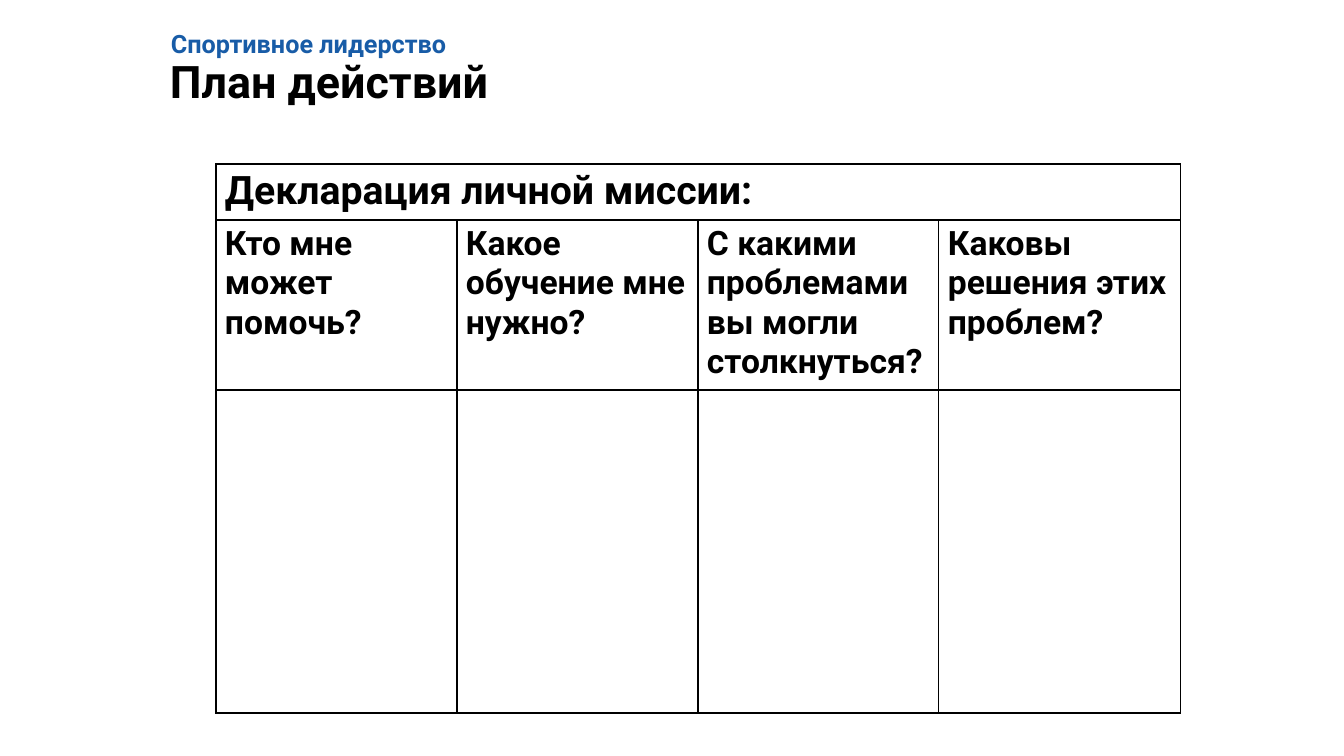
from lxml import etree
from pptx import Presentation
from pptx.dml.color import RGBColor
from pptx.enum import text as t
from pptx.oxml import ns
from pptx.util import Emu, Pt

EMU_PER_PX = 914400 / 100.8
COLORS = {"black": "000000", "blue": "185CA7"}
FONT = "Roboto"
MISSION = "Декларация личной миссии:"
QUESTIONS = [
    "Кто мне может помочь?",
    "Какое обучение мне нужно?",
    "С какими проблемами вы могли столкнуться?",
    "Каковы решения этих проблем?",
]
COLUMN_WIDTHS = [241, 241, 241, 242]
ROW_HEIGHTS = [56, 170, 323]


def px(value):
    return Emu(round(value * EMU_PER_PX))


def write_text(frame, content, *, size, color="black", bold=True):
    run = frame.paragraphs[0].add_run()
    run.text = content
    run.font.name = FONT
    run.font.size = Pt(size)
    run.font.bold = bold
    run.font.color.rgb = RGBColor.from_string(COLORS[color])


def add_label(slide, content, left, top, width, height, *,
              wrap=True, anchor=t.MSO_ANCHOR.TOP, **text_format):
    shape = slide.shapes.add_textbox(px(left), px(top), px(width), px(height))
    frame = shape.text_frame
    frame.word_wrap = wrap
    frame.vertical_anchor = anchor
    write_text(frame, content, **text_format)


def add_borders(cell, color="black", width=0.96):
    properties = cell._tc.get_or_add_tcPr()
    for position, side in enumerate(("lnL", "lnR", "lnT", "lnB")):
        line = etree.Element(ns.qn(f"a:{side}"), w=str(Pt(width)))
        fill = etree.SubElement(line, ns.qn("a:solidFill"))
        etree.SubElement(fill, ns.qn("a:srgbClr"), val=COLORS[color])
        properties.insert(position, line)


def format_cell(cell):
    cell.margin_left = cell.margin_right = px(9)
    cell.margin_top = cell.margin_bottom = px(4)
    cell.fill.background()
    add_borders(cell)


def add_plan_table(slide, left, top):
    frame = slide.shapes.add_table(
        len(ROW_HEIGHTS), len(COLUMN_WIDTHS), px(left), px(top),
        px(sum(COLUMN_WIDTHS)), px(sum(ROW_HEIGHTS)))
    table = frame.table
    table.first_row = False
    table.horz_banding = False
    for column, width in zip(table.columns, COLUMN_WIDTHS):
        column.width = px(width)
    for row, height in zip(table.rows, ROW_HEIGHTS):
        row.height = px(height)
    for cell in table.iter_cells():
        format_cell(cell)
    table.cell(0, 0).merge(table.cell(0, len(COLUMN_WIDTHS) - 1))
    write_text(table.cell(0, 0).text_frame, MISSION, size=28)
    for index, question in enumerate(QUESTIONS):
        write_text(table.cell(1, index).text_frame, question, size=24)


def main():
    presentation = Presentation()
    presentation.slide_width = px(1344)
    presentation.slide_height = px(756)
    slide = presentation.slides.add_slide(presentation.slide_layouts[6])
    add_label(slide, "Спортивное лидерство", 161, 23, 313, 40,
              wrap=False, size=18, color="blue")
    add_plan_table(slide, 216, 164)
    add_label(slide, "План действий", 160, 50, 954, 61,
              anchor=t.MSO_ANCHOR.MIDDLE, size=32)
    presentation.save("out.pptx")


if __name__ == "__main__":
    main()
